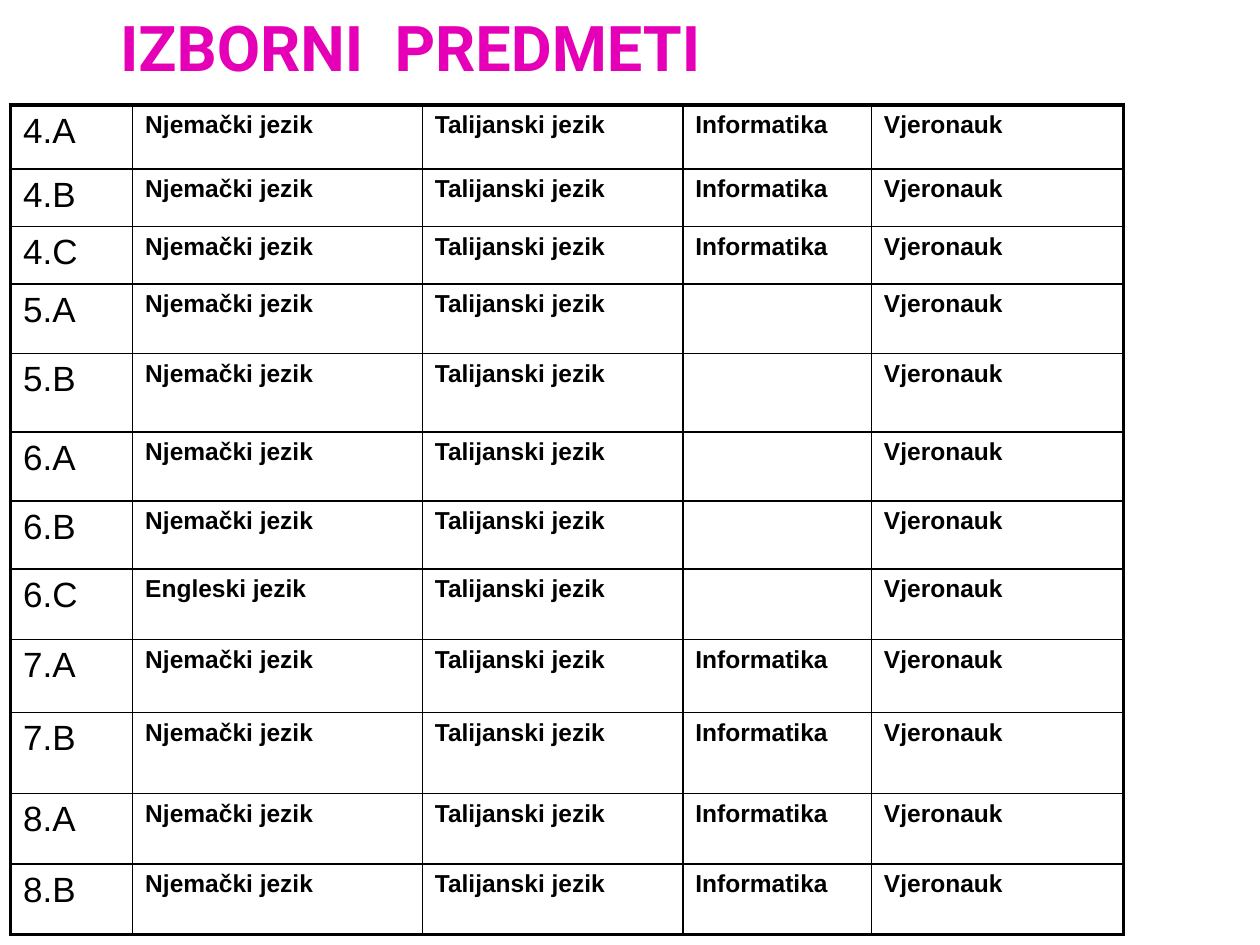
from pptx import Presentation
from pptx.util import Pt
from pptx.dml.color import RGBColor
from pptx.enum.text import MSO_ANCHOR
from pptx.oxml.ns import qn
from lxml.etree import SubElement

TITLE = "IZBORNI  PREDMETI"
GER, ENG, ITA = "Njemački jezik", "Engleski jezik", "Talijanski jezik"
INF, REL = "Informatika", "Vjeronauk"
ROWS = [
    ("4.A", GER, ITA, INF, REL, 36.6),
    ("4.B", GER, ITA, INF, REL, 32.9),
    ("4.C", GER, ITA, INF, REL, 32.9),
    ("5.A", GER, ITA, "", REL, 39.7),
    ("5.B", GER, ITA, "", REL, 44.9),
    ("6.A", GER, ITA, "", REL, 39.4),
    ("6.B", GER, ITA, "", REL, 38.9),
    ("6.C", ENG, ITA, "", REL, 40.3),
    ("7.A", GER, ITA, INF, REL, 41.7),
    ("7.B", GER, ITA, INF, REL, 46.3),
    ("8.A", GER, ITA, INF, REL, 40.3),
    ("8.B", GER, ITA, INF, REL, 40.3),
]
WIDTHS = [69.8, 165.5, 148.9, 107.8, 144]
COLORS = {"title": "E500B7", "ink": "000000"}
THICK, THIN = 2.25, 1


def write(para, text, font, size, bold, color):
    run = para.add_run()
    run.text = text
    run.font.name = font
    run.font.size = Pt(size)
    run.font.bold = bold
    run.font.color.rgb = RGBColor.from_string(COLORS[color])


def border(cell, sides):
    props = cell._tc.get_or_add_tcPr()
    for index, (side, outer) in enumerate(sides):
        line = SubElement(props, qn("a:" + side))
        line.set("w", str(Pt(THICK if outer else THIN)))
        fill = SubElement(line, qn("a:solidFill"))
        SubElement(fill, qn("a:srgbClr")).set("val", COLORS["ink"])
        props.remove(line)
        props.insert(index, line)


deck = Presentation()
deck.slide_width, deck.slide_height = Pt(720), Pt(540)
slide = deck.slides.add_slide(deck.slide_layouts[6])

box = slide.shapes.add_textbox(Pt(0), Pt(18), Pt(624), Pt(30))
frame = box.text_frame
frame.word_wrap = True
frame.vertical_anchor = MSO_ANCHOR.BOTTOM
frame.margin_left = frame.margin_right = Pt(3.6)
frame.margin_top = frame.margin_bottom = Pt(0)
head = frame.paragraphs[0]
head._p.get_or_add_pPr().set("marL", str(Pt(65)))
write(head, TITLE, "Roboto", 36, True, "title")

last_row, last_col = len(ROWS) - 1, len(WIDTHS) - 1
table = slide.shapes.add_table(
    len(ROWS), len(WIDTHS), Pt(6), Pt(60),
    Pt(sum(WIDTHS)), Pt(sum(row[-1] for row in ROWS))).table
table.first_row = table.horz_banding = False
for col, width in zip(table.columns, WIDTHS):
    col.width = Pt(width)
for r, (*texts, height) in enumerate(ROWS):
    table.rows[r].height = Pt(height)
    for c, text in enumerate(texts):
        cell = table.cell(r, c)
        cell.fill.background()
        border(cell, [("lnL", c == 0), ("lnR", c == last_col),
                      ("lnT", r == 0), ("lnB", r == last_row)])
        if text:
            size = 14 if c else 20
            write(cell.text_frame.paragraphs[0], text, "Arial", size, c > 0, "ink")

deck.save("out.pptx")
